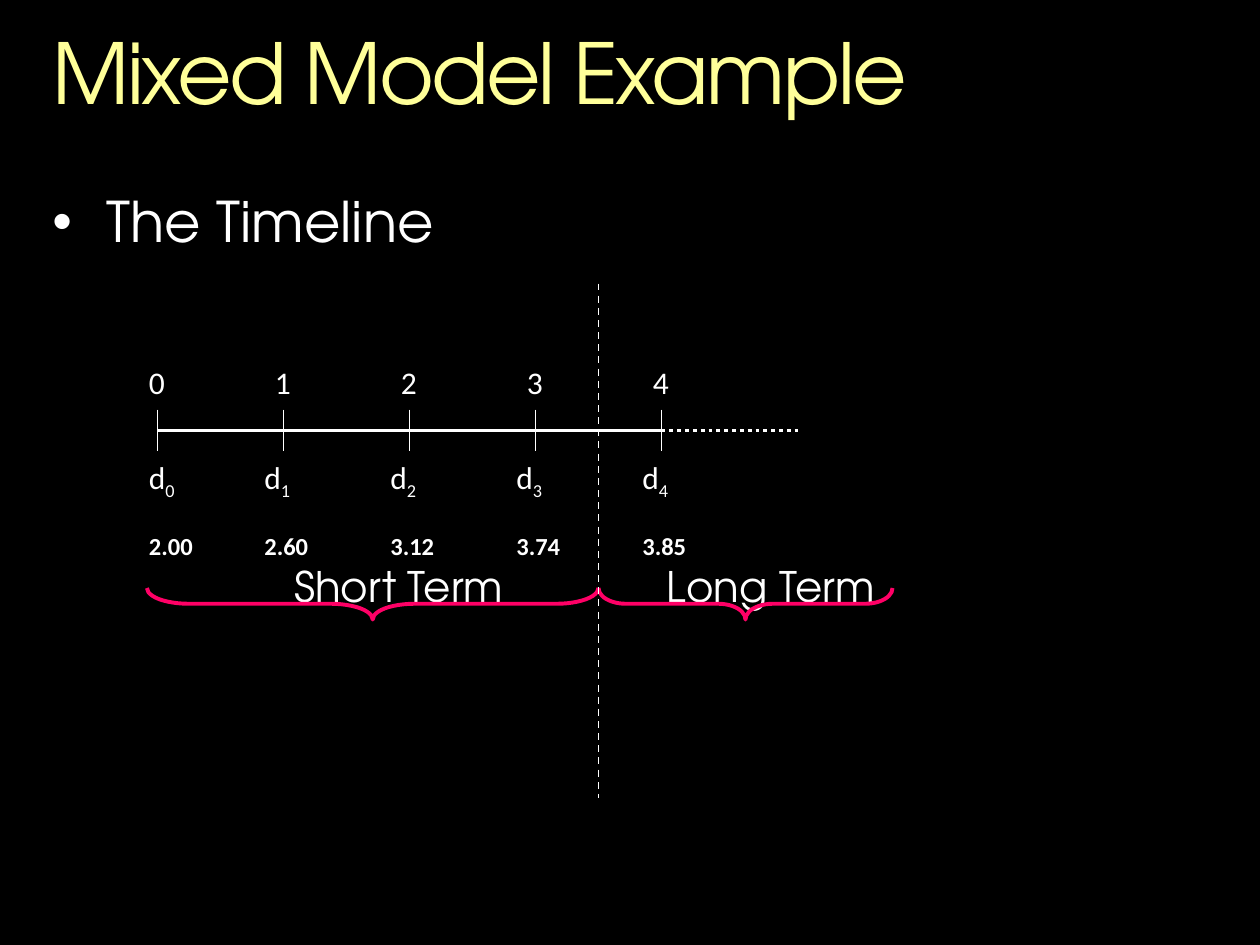
"""Build the mixed model timeline slide."""
from lxml.etree import SubElement
from pptx import Presentation
from pptx.dml.color import RGBColor
from pptx.enum.dml import MSO_LINE
from pptx.enum.shapes import MSO_CONNECTOR, MSO_SHAPE
from pptx.enum.text import MSO_ANCHOR, MSO_AUTO_SIZE, PP_ALIGN
from pptx.oxml.ns import qn
from pptx.util import Pt

rgb = RGBColor.from_string
HEAD, TEXT = "TeX Gyre Adventor", "Calibri"
WHITE, PINK = "FFFFFF", "FF0066"

deck = Presentation()
deck.slide_width, deck.slide_height = Pt(720), Pt(540)
slide = deck.slides.add_slide(deck.slide_layouts[1])
slide.background.fill.solid()
slide.background.fill.fore_color.rgb = rgb("000000")
shapes = slide.shapes


def label(x, y, w, h, text, size, face=TEXT, bold=False):
    box = shapes.add_textbox(Pt(x), Pt(y), Pt(w), Pt(h))
    box.text_frame.word_wrap = True
    para = box.text_frame.paragraphs[0]
    para.add_run().text = text
    font = para.font
    font.name, font.size, font.bold = face, Pt(size), bold
    font.color.rgb = rgb(WHITE)
    return para


def rule(x1, y1, x2, y2, width, dash=None):
    line = shapes.add_connector(MSO_CONNECTOR.STRAIGHT, Pt(x1), Pt(y1), Pt(x2), Pt(y2))
    line.line.color.rgb = rgb(WHITE)
    line.line.width = Pt(width)
    if dash:
        line.line.dash_style = dash
    SubElement(line._element.spPr, qn("a:effectLst"))


title, body = shapes.title, slide.placeholders[1]
for holder, text, top, high, size, color in (
    (title, "Mixed Model Example", 18, 53, 48, "FFFF99"),
    (body, "The Timeline", 111, 42, 32, WHITE),
):
    holder.left, holder.top, holder.width, holder.height = Pt(30), Pt(top), Pt(660), Pt(high)
    frame = holder.text_frame
    frame.text = text
    frame.auto_size = MSO_AUTO_SIZE.NONE
    frame.vertical_anchor = MSO_ANCHOR.TOP
    frame.margin_left = frame.margin_top = frame.margin_right = frame.margin_bottom = 0
    para = frame.paragraphs[0]
    para.alignment = PP_ALIGN.LEFT
    para.line_spacing = 0.9
    para.space_before = Pt(0)
    para.font.name, para.font.size = HEAD, Pt(size)
    para.font.color.rgb = rgb(color)
title.text_frame.paragraphs[0].runs[0]._r.get_or_add_rPr().set("spc", "-150")
indent = body.text_frame.paragraphs[0]._p.get_or_add_pPr()
indent.set("marL", str(Pt(31)))
indent.set("indent", str(-Pt(31)))

start, step, axis = 90, 72, 246
end = start + 4 * step
rule(start, axis, end, axis, 2.25)
rule(end, axis, 456, axis, 2.25, MSO_LINE.ROUND_DOT)

for i, value in enumerate(("2.00", "2.60", "3.12", "3.74", "3.85")):
    x = start + i * step
    left = x - 18 if i else x - 12
    rule(x, axis - 12, x, axis + 12, 1)
    label(x - 12, 204, 24, 29, str(i), 18)
    sub = label(left, 258, 42, 29, "d", 18).add_run()
    sub.text = str(i)
    sub._r.get_or_add_rPr().set("baseline", "-25000")
    label(left, 300, 42, 24, value, 14, bold=True)

split, thick = 342, 18
for term, x, left, right, curve in (
    ("Short Term", 161, 84, split, 1.325),
    ("Long Term", 374, split, 510, 0.863),
):
    label(x, 317, 140, 36, term, 24, HEAD)
    span = right - left
    brace = shapes.add_shape(
        MSO_SHAPE.LEFT_BRACE,
        Pt((left + right - thick) / 2), Pt(345 - span / 2), Pt(thick), Pt(span),
    )
    brace.rotation = 270
    brace.adjustments[0] = curve
    brace.shadow.inherit = False
    brace.fill.background()
    brace.line.color.rgb = rgb(PINK)
    brace.line.width = Pt(2.25)

rule(split, 162, split, 456, 1, MSO_LINE.DASH)

deck.save("out.pptx")
